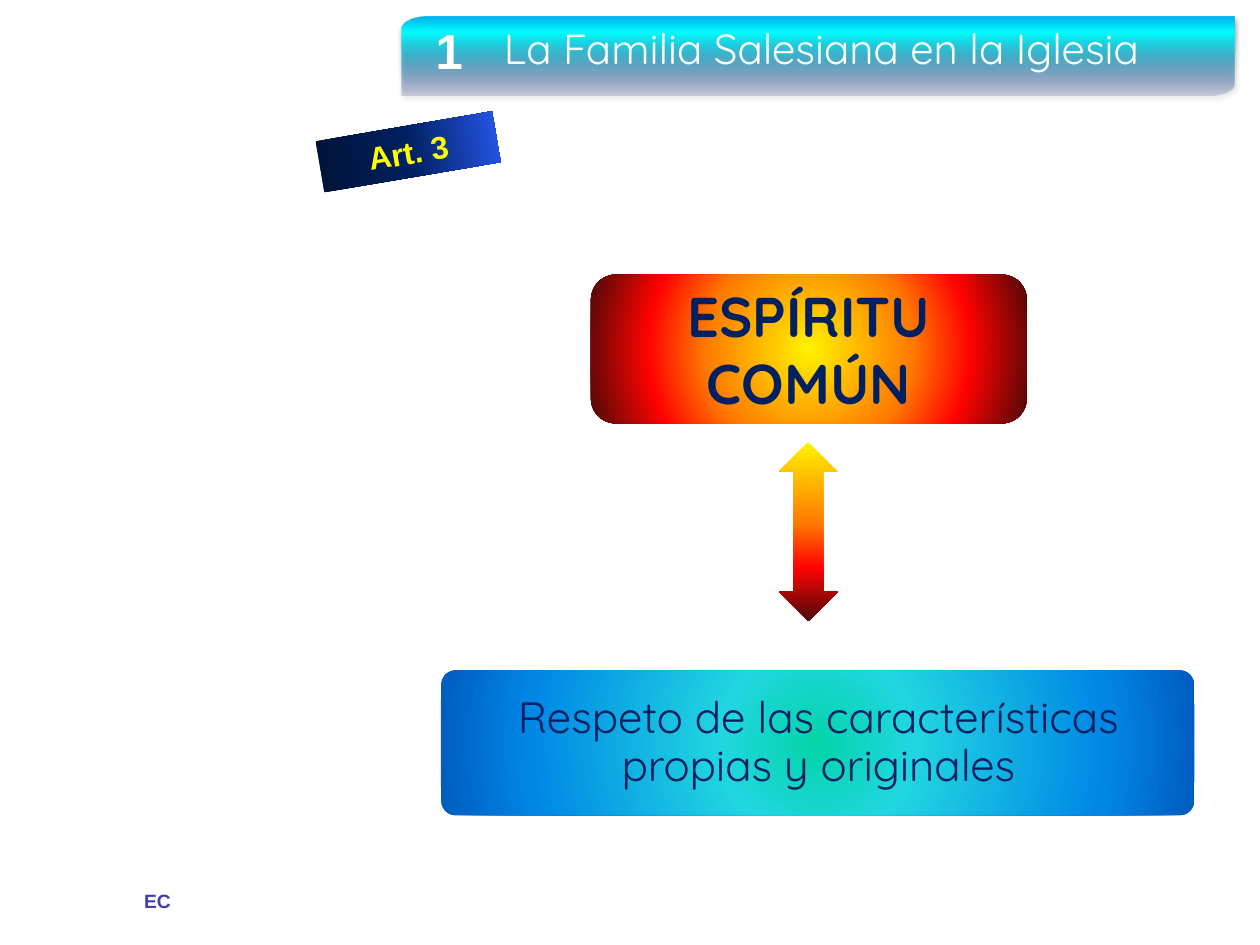
from math import cos, radians, sin

from lxml import etree
from pptx import Presentation
from pptx.dml.color import RGBColor
from pptx.enum.shapes import MSO_SHAPE
from pptx.enum.text import MSO_ANCHOR, PP_ALIGN
from pptx.oxml import parse_xml
from pptx.oxml.ns import nsdecls, qn
from pptx.util import Inches, Pt

RECTANGLE = MSO_SHAPE.RECTANGLE
ROUNDED = MSO_SHAPE.ROUNDED_RECTANGLE
ARROW = MSO_SHAPE.UP_DOWN_ARROW
TOP, MIDDLE = MSO_ANCHOR.TOP, MSO_ANCHOR.MIDDLE
LEFT, CENTER = PP_ALIGN.LEFT, PP_ALIGN.CENTER

WHITE = RGBColor(0xFF, 0xFF, 0xFF)
NEAR_WHITE = RGBColor(0xFE, 0xFE, 0xFE)
YELLOW = RGBColor(0xFF, 0xFF, 0x00)
NAVY = RGBColor(0x00, 0x20, 0x60)
VIOLET = RGBColor(0x40, 0x40, 0xB3)
OUTLINE = RGBColor(0x20, 0x20, 0x86)
BLACK = RGBColor(0, 0, 0)

# Gradient stops: position, colour, opacity (all in percent)
HEADER = [(0, RGBColor(0x1B, 0x1B, 0x7E), 16), (80, RGBColor(0x00, 0xFF, 0xFF), 100),
          (100, RGBColor(0x00, 0xB0, 0xF0), 100)]
BLUES = [(0, RGBColor(0x00, 0x12, 0x36), 100), (50, NAVY, 100),
         (100, RGBColor(0x28, 0x57, 0xEC), 100)]
FIRE = [(0, RGBColor(0xFF, 0xF2, 0x00), 100), (45, RGBColor(0xFF, 0x7A, 0x00), 100),
        (70, RGBColor(0xFF, 0x03, 0x00), 100), (100, RGBColor(0x4D, 0x08, 0x08), 100)]
SEA = [(0, RGBColor(0x03, 0xD4, 0xA8), 100), (25, RGBColor(0x21, 0xD6, 0xE0), 100),
       (75, RGBColor(0x00, 0x87, 0xE6), 100), (100, RGBColor(0x00, 0x5C, 0xBF), 100)]
RADIAL = ('<a:path path="circle"><a:fillToRect l="50000" t="50000" '
          'r="50000" b="50000"/></a:path>')
LINEAR = '<a:lin ang="{}" scaled="0"/>'
SHADOW = ('<a:effectLst {}><a:outerShdw blurRad="{}" dist="{}" dir="{}" algn="tl" rotWithShape="0">'
          '<a:srgbClr val="{}"><a:alpha val="{}000"/></a:srgbClr></a:outerShdw></a:effectLst>')


def paint(shape, stops, direction):
    """Give a shape a gradient fill, no line and no shadow."""
    shape.shadow.inherit = False
    shape.line.fill.background()
    shape.fill.background()
    stop_xml = "".join(
        f'<a:gs pos="{position}000"><a:srgbClr val="{color}">'
        f'<a:alpha val="{opacity}000"/></a:srgbClr></a:gs>'
        for position, color, opacity in stops)
    gradient = parse_xml(f'<a:gradFill {nsdecls("a")} rotWithShape="1">'
                         f'<a:gsLst>{stop_xml}</a:gsLst>{direction}</a:gradFill>')
    properties = shape._element.spPr
    properties.replace(properties.find(qn("a:noFill")), gradient)


def write(shape, text, align, anchor, wrap, font_format, color):
    """Write one formatted paragraph into a shape and return its run."""
    frame = shape.text_frame
    frame.word_wrap = wrap
    frame.vertical_anchor = anchor
    paragraph = frame.paragraphs[0]
    paragraph.alignment = align
    run = paragraph.add_run()
    run.text = text
    for name, value in font_format.items():
        setattr(run.font, name, value)
    run.font.color.rgb = color
    return run


presentation = Presentation()
presentation.slide_width = Inches(10)
presentation.slide_height = Inches(7.5)
slide = presentation.slides.add_slide(presentation.slide_layouts[6])
shapes = slide.shapes

# Header band: top-left and bottom-right corners are elliptical
left, top, right, bottom = 3.19, 0.13, 9.8, 0.76
radius_x, radius_y = 0.21, 0.1
corners = [(left + radius_x, top + radius_y, 180), (right - radius_x, bottom - radius_y, 0)]
arcs = [[(x + radius_x * cos(radians(start + step)), y + radius_y * sin(radians(start + step)))
         for step in range(0, 91, 6)] for x, y, start in corners]
outline = arcs[0] + [(right, top)] + arcs[1] + [(left, bottom)]
points = [(Inches(x), Inches(y)) for x, y in outline]
builder = shapes.build_freeform(*points[0], scale=1.0)
builder.add_line_segments(points[1:], close=True)
band = builder.convert_to_shape()
paint(band, HEADER, LINEAR.format(16200000))
band_properties = band._element.spPr
band_properties.replace(
    band_properties.find(qn("a:effectLst")),
    parse_xml(SHADOW.format(nsdecls("a"), Pt(3.1), Pt(1.8), 5400000, BLACK, 35)))

# Gradient shapes, with their text if any
ARTICLE_FONT = {"name": "Arial", "size": Pt(18), "bold": True}
SPIRIT_FONT = {"name": "Quicksand", "size": Pt(32), "bold": True}
for kind, box, rotation, stops, direction, text, font_format, color in [
    (RECTANGLE, (2.53, 1, 1.42, 0.41), 350.3, BLUES, LINEAR.format(0),
     "Art. 3", ARTICLE_FONT, YELLOW),
    (ROUNDED, (4.69, 2.18, 3.46, 1.18), 0, FIRE, RADIAL, "ESPÍRITU COMÚN", SPIRIT_FONT, NAVY),
    (ROUNDED, (3.5, 5.32, 5.98, 1.15), 0, SEA, RADIAL, None, None, None),
    (ARROW, (6.18, 3.51, 0.47, 1.42), 0, FIRE, LINEAR.format(5400000), None, None, None),
]:
    shape = shapes.add_shape(kind, *map(Inches, box))
    shape.rotation = rotation
    paint(shape, stops, direction)
    if text:
        write(shape, text, CENTER, MIDDLE, True, font_format, color)
    elif kind == ROUNDED:
        shape.adjustments[0] = 0.1

# Header number and title, with shadowed letters
number = shapes.add_textbox(*map(Inches, (3.35, 0.11, 0.43, 0.57)))
number_run = write(number, "1", CENTER, TOP, False,
                   {"name": "Arial", "size": Pt(28), "bold": True}, NEAR_WHITE)
title = shapes.add_textbox(*map(Inches, (3.82, 0.13, 5.83, 0.5)))
title.text_frame.margin_left = Inches(0.18)
title_run = write(title, "La Familia Salesiana en la Iglesia", LEFT, TOP, True,
                  {"name": "Quicksand", "size": Pt(24)}, WHITE)
for run in (number_run, title_run):
    run.font._element.find(qn("a:solidFill")).addnext(
        parse_xml(SHADOW.format(nsdecls("a"), Pt(3), Pt(3), 2700000, BLACK, 60)))

# Thin outline around the number
number_properties = number_run.font._element
number_properties.set("spc", "50")
line = etree.Element(qn("a:ln"), w=str(Pt(1)))
line_fill = etree.SubElement(line, qn("a:solidFill"))
etree.SubElement(line_fill, qn("a:srgbClr"), val=str(OUTLINE))
number_properties.insert(0, line)

# Text of the lower panel
respect = shapes.add_textbox(*map(Inches, (3.59, 5.36, 5.81, 1.08)))
for side in ("left", "right", "top", "bottom"):
    setattr(respect.text_frame, f"margin_{side}", Inches(0.1))
write(respect, "Respeto de las características propias y originales", CENTER, MIDDLE, True,
      {"name": "Quicksand", "size": Pt(25)}, NAVY)
respect.text_frame.paragraphs[0].line_spacing = 0.9

# Footer initials
footer = shapes.add_textbox(*map(Inches, (1.04, 7.01, 0.42, 0.29)))
write(footer, "EC", CENTER, TOP, False, {"name": "Arial", "size": Pt(11), "bold": True}, VIOLET)

presentation.save("out.pptx")
